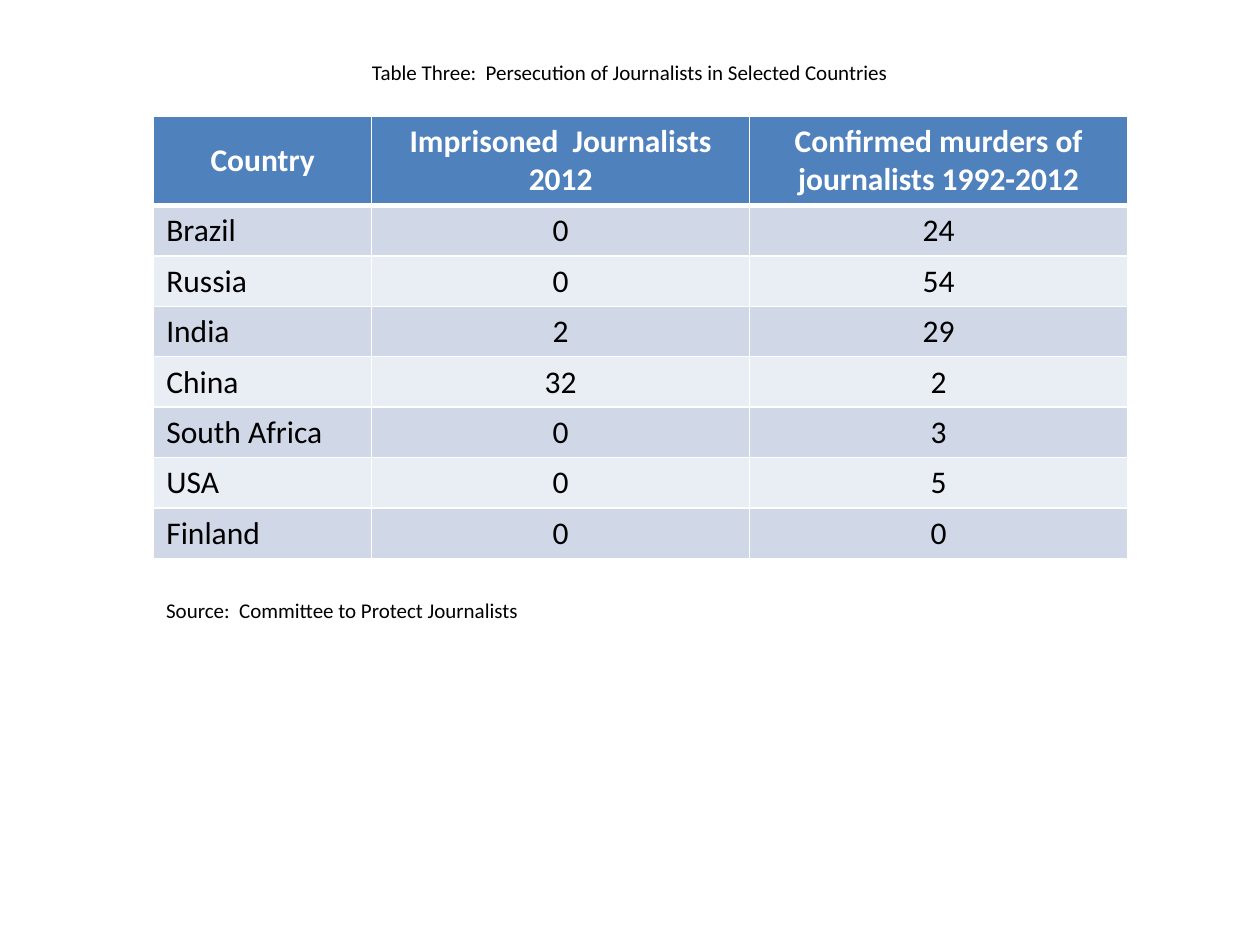
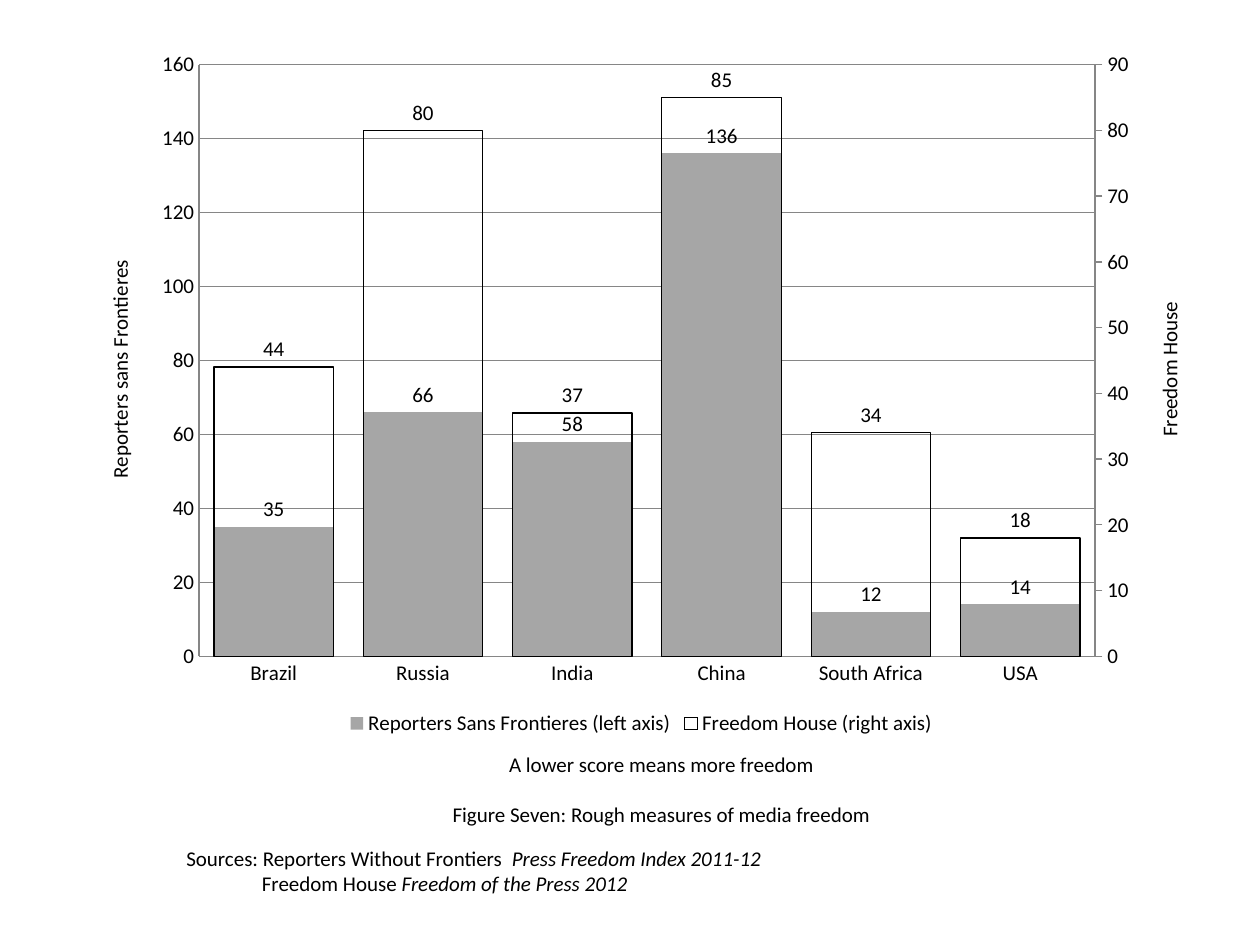
from copy import deepcopy

from lxml.etree import SubElement
from pptx import Presentation
from pptx.chart.axis import CategoryAxis, ValueAxis
from pptx.chart.data import CategoryChartData
from pptx.dml.color import RGBColor
from pptx.enum.chart import (
    XL_CHART_TYPE as ChartType,
    XL_LABEL_POSITION as LabelPosition,
    XL_LEGEND_POSITION as LegendPosition,
    XL_TICK_MARK as TickMark,
)
from pptx.enum.text import MSO_ANCHOR as Anchor, PP_ALIGN as Align
from pptx.oxml import parse_xml
from pptx.oxml.ns import nsdecls, qn
from pptx.util import Inches, Pt

FONT = "Calibri"
SMALL, LARGE = Pt(12), Pt(18)
BLACK = RGBColor(0x00, 0x00, 0x00)
WHITE = RGBColor(0xFF, 0xFF, 0xFF)
HEADER_BLUE = RGBColor(0x4F, 0x81, 0xBD)
BANDS = RGBColor(0xD0, 0xD8, 0xE8), RGBColor(0xE9, 0xED, 0xF4)
BAR_GREY = RGBColor(0xA6, 0xA6, 0xA6)
AXIS_GREY = RGBColor(0x86, 0x86, 0x86)

JOURNALISTS = [
    ("Country", "Imprisoned  Journalists 2012",
     "Confirmed murders of journalists 1992-2012"),
    ("Brazil", 0, 24),
    ("Russia", 0, 54),
    ("India", 2, 29),
    ("China", 32, 2),
    ("South Africa", 0, 3),
    ("USA", 0, 5),
    ("Finland", 0, 0),
]
SCORED_COUNTRIES = ["Brazil", "Russia", "India", "China", "South Africa", "USA"]
SCORES = {
    "Reporters Sans Frontieres (left axis)": [35, 66, 58, 136, 12, 14],
    "Freedom House (right axis)": [44, 80, 37, 85, 34, 18],
}


def set_font(font, size=SMALL, color=BLACK, bold=False):
    font.name, font.size, font.bold = FONT, size, bold
    font.color.rgb = color


def add_caption(slide, box, lines, align=Align.LEFT, anchor=Anchor.TOP):
    """Each line is a list of (text, italic) runs; returns the paragraphs."""
    frame = slide.shapes.add_textbox(*map(Inches, box)).text_frame
    frame.word_wrap = True
    frame.vertical_anchor = anchor
    for number, runs in enumerate(lines):
        line = frame.add_paragraph() if number else frame.paragraphs[0]
        line.alignment = align
        set_font(line.font)
        for text, italic in runs:
            run = line.add_run()
            run.text = text
            if italic:
                run.font.italic = True
    return frame.paragraphs


# Table slide
def set_borders(cell, bottom):
    properties = cell._tc.get_or_add_tcPr()
    for side, width in (("L", 1), ("R", 1), ("T", 1), ("B", bottom)):
        line = SubElement(properties, qn(f"a:ln{side}"), w=str(Pt(width)))
        fill = SubElement(line, qn("a:solidFill"))
        SubElement(fill, qn("a:srgbClr"), val=str(WHITE))


def add_journalist_table(slide, box):
    table = slide.shapes.add_table(
        len(JOURNALISTS), len(JOURNALISTS[0]), *map(Inches, box)).table
    for column, width in zip(table.columns, (1.73, 3, 3)):
        column.width = Inches(width)
    for r, record in enumerate(JOURNALISTS):
        header = r == 0
        table.rows[r].height = Inches(0.71 if header else 0.4)
        for c, value in enumerate(record):
            cell = table.cell(r, c)
            cell.text = str(value)
            cell.vertical_anchor = Anchor.MIDDLE if header else Anchor.TOP
            set_borders(cell, bottom=3 if header else 1)
            cell.fill.solid()
            cell.fill.fore_color.rgb = HEADER_BLUE if header else BANDS[(r - 1) % 2]
            entry = cell.text_frame.paragraphs[0]
            entry.alignment = Align.CENTER if header or c else Align.LEFT
            set_font(entry.font, LARGE, WHITE if header else BLACK, header)


def build_persecution_slide(slide):
    add_caption(slide, (0.5, 0.3, 9, 0.54),
                [[("Table Three:  Persecution of Journalists in Selected Countries", False)]],
                Align.CENTER, Anchor.MIDDLE)
    add_journalist_table(slide, (1.22, 0.92, 7.73, 3.54))
    add_caption(slide, (1.22, 4.69, 4.72, 0.3),
                [[("Source:  Committee to Protect Journalists", False)]])


# Chart slide
def move_last_series_to_right(chart):
    """Gives the last series its own bars and axes; returns the right axis."""
    plot_area = chart._chartSpace.chart.plotArea
    left_bars = plot_area.find(qn("c:barChart"))
    right_bars = deepcopy(left_bars)
    left_bars.remove(left_bars.findall(qn("c:ser"))[-1])
    right_bars.remove(right_bars.find(qn("c:ser")))
    left_bars.addnext(right_bars)

    left_axes = [plot_area.find(qn(tag)) for tag in ("c:catAx", "c:valAx")]
    cat_axis, val_axis = right_axes = [deepcopy(axis) for axis in left_axes]
    for axis in right_axes:
        left_axes[-1].addnext(axis)
    ids = ["5001", "5002"]
    for reference, axis_id in zip(right_bars.findall(qn("c:axId")), ids):
        reference.set("val", axis_id)
    for axis, own, other in zip(right_axes, ids, reversed(ids)):
        axis.find(qn("c:axId")).set("val", own)
        axis.find(qn("c:crossAx")).set("val", other)
    val_axis.find(qn("c:axPos")).set("val", "r")
    val_axis.find(qn("c:crosses")).set("val", "max")
    CategoryAxis(cat_axis).visible = False
    return ValueAxis(val_axis)


def style_score_axis(axis, title, top, step, tick, grid):
    axis.minimum_scale, axis.maximum_scale, axis.major_unit = 0, top, step
    axis.major_tick_mark = tick
    axis.has_major_gridlines = grid
    if grid:
        axis.major_gridlines.format.line.color.rgb = AXIS_GREY
    axis.format.line.color.rgb = AXIS_GREY
    frame = axis.axis_title.text_frame
    frame.text = title
    set_font(frame.paragraphs[0].font)
    direction = frame._txBody.find(qn("a:bodyPr"))
    direction.set("rot", "-5400000")
    direction.set("vert", "horz")


def set_plot_layout(chart, x, y, w, h):
    plot_area = chart._chartSpace.chart.plotArea
    for layout in plot_area.findall(qn("c:layout")):
        plot_area.remove(layout)
    sizes = "".join(f'<c:{key} val="{value}"/>'
                    for key, value in zip("xywh", (x, y, w, h)))
    plot_area.insert(0, parse_xml(
        f'<c:layout {nsdecls("c")}><c:manualLayout><c:layoutTarget val="inner"/>'
        '<c:xMode val="edge"/><c:yMode val="edge"/>'
        f'{sizes}</c:manualLayout></c:layout>'))


def add_freedom_chart(slide, box):
    data = CategoryChartData()
    data.categories = SCORED_COUNTRIES
    for name, values in SCORES.items():
        data.add_series(name, values)
    chart = slide.shapes.add_chart(
        ChartType.COLUMN_CLUSTERED, *map(Inches, box), data).chart
    set_font(chart.font)
    chart.has_title = False
    chart.has_legend = True
    chart.legend.position = LegendPosition.BOTTOM
    chart.legend.include_in_layout = False
    chart.category_axis.major_tick_mark = TickMark.NONE
    chart.category_axis.format.line.color.rgb = AXIS_GREY

    # Axes: the left one is taken while it is the only value axis
    left_axis = chart.value_axis
    right_axis = move_last_series_to_right(chart)
    style_score_axis(left_axis, "Reporters sans Frontieres",
                     160, 20, TickMark.NONE, True)
    style_score_axis(right_axis, "Freedom House", 90, 10, TickMark.OUTSIDE, False)
    set_plot_layout(chart, 0.11, 0.04, 0.79, 0.84)

    # Bars and labels
    for plot in chart.plots:
        plot.gap_width = 25
        plot.vary_by_categories = False
        plot.has_data_labels = True
        labels = plot.data_labels
        labels.show_value = True
        labels.position = LabelPosition.OUTSIDE_END
        set_font(labels.font)
    reporters, freedom_house = (plot.series[0].format for plot in chart.plots)
    reporters.fill.solid()
    reporters.fill.fore_color.rgb = BAR_GREY
    freedom_house.fill.background()
    freedom_house.line.color.rgb = BLACK
    freedom_house.line.width = Pt(0.75)


def build_freedom_slide(slide):
    add_freedom_chart(slide, (0.59, 0.29, 9, 5.59))
    title = add_caption(slide, (0.75, 5.95, 9, 0.63),
                        [[("A lower score means more freedom", False)],
                         [("Figure Seven: Rough measures of media freedom", False)]],
                        Align.CENTER, Anchor.MIDDLE)
    title[1].space_before = Pt(14)
    sources = add_caption(slide, (1.38, 6.66, 6.22, 0.5),
                          [[("Sources: Reporters Without Frontiers  ", False),
                            ("Press Freedom Index 2011-12", True)],
                           [("Freedom House ", False),
                            ("Freedom of the Press 2012", True)]])
    sources[1]._p.get_or_add_pPr().set("marL", str(Inches(0.6)))


def main():
    deck = Presentation()
    deck.slide_width, deck.slide_height = Inches(10), Inches(7.5)
    blank = deck.slide_layouts[6]
    for build in (build_persecution_slide, build_freedom_slide):
        build(deck.slides.add_slide(blank))
    deck.save("out.pptx")


if __name__ == "__main__":
    main()
